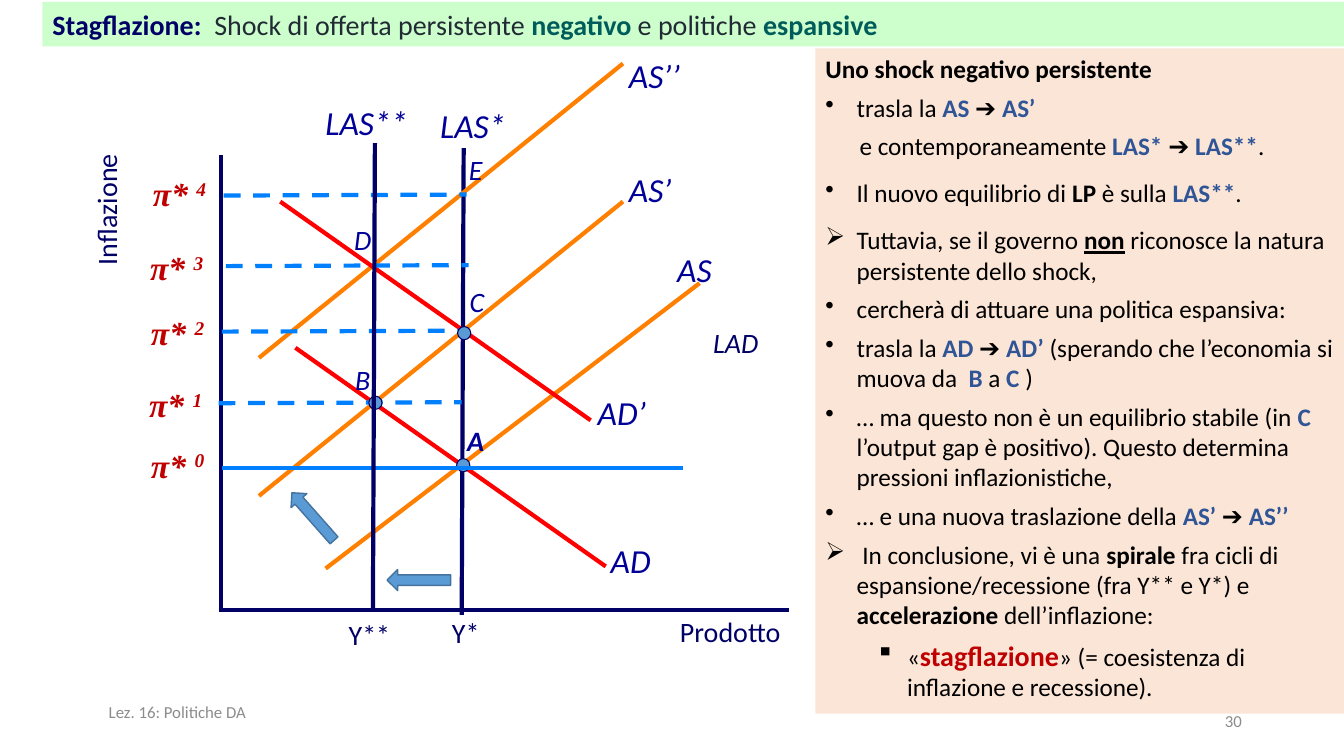
from lxml.etree import SubElement
from pptx import Presentation
from pptx.dml.color import RGBColor
from pptx.enum.dml import MSO_LINE
from pptx.enum.shapes import MSO_CONNECTOR, MSO_SHAPE
from pptx.enum.text import MSO_ANCHOR, MSO_AUTO_SIZE, PP_ALIGN
from pptx.oxml.ns import qn
from pptx.util import Pt

COLORS = {
    "navy": "000066", "label": "000099", "supply": "FF8000", "demand": "FF0000",
    "level": "0080FF", "rate": "C00000", "marker": "5B9BD5", "edge": "43739E",
    "bar": "CCFFCC", "heading": "222A35", "teal": "005C5A", "panel": "FBE5D6",
    "term": "2F5597", "black": "000000", "gray": "8C8C8C",
}


def write(paragraph, text, size=18, color="black", bold=False, italic=False,
          underline=False, font="Calibri", baseline=0):
    run = paragraph.add_run()
    run.text = text
    run.font.size = Pt(size)
    run.font.name = font
    run.font.bold = bold
    run.font.italic = italic
    run.font.underline = underline
    run.font.color.rgb = RGBColor.from_string(COLORS[color])
    if baseline:
        run.font._element.set("baseline", str(baseline * 1000))


def draw_line(x1, y1, x2, y2, color, dashed=False):
    line = slide.shapes.add_connector(MSO_CONNECTOR.STRAIGHT, Pt(x1), Pt(y1), Pt(x2), Pt(y2))
    line.line.color.rgb = RGBColor.from_string(COLORS[color])
    line.line.width = Pt(3)
    if dashed:
        line.line.dash_style = MSO_LINE.DASH
    SubElement(line._element.spPr, qn("a:effectLst"))


presentation = Presentation()
presentation.slide_width = Pt(960)
presentation.slide_height = Pt(540)
slide = presentation.slides.add_slide(presentation.slide_layouts[5])

heading = slide.shapes.title
heading.left, heading.top, heading.width, heading.height = Pt(30.2), Pt(1.4), Pt(929.8), Pt(31.7)
heading.fill.solid()
heading.fill.fore_color.rgb = RGBColor.from_string(COLORS["bar"])
heading.text_frame.auto_size = MSO_AUTO_SIZE.NONE
heading.text_frame.vertical_anchor = MSO_ANCHOR.TOP
heading_line = heading.text_frame.paragraphs[0]
heading_line.alignment = PP_ALIGN.LEFT
for text, color, bold in [
    ("Stagflazione:  ", "navy", True),
    ("Shock di offerta persistente ", "heading", False),
    ("negativo", "teal", True),
    (" e politiche ", "heading", False),
    ("espansive", "teal", True),
]:
    write(heading_line, text, size=20, color=color, bold=bold)

draw_line(157.7, 110.9, 157.7, 434.9, "navy")
draw_line(156.2, 435.6, 563.8, 435.6, "navy")
draw_line(331.2, 105.8, 329.8, 439.2, "navy")
for y in (354.2, 255.6):
    draw_line(185, y, 445, y - 210.2, "supply")
draw_line(232.6, 406.1, 499.7, 202.3, "supply")
for x, y in [(200.2, 144), (211, 248.4)]:
    draw_line(x, y, x + 221.7, y + 156.2, "demand")
for x, y in [(156.2, 288), (158.4, 236.9), (161.3, 190.1), (159.8, 139.7)]:
    draw_line(x, y, x + 173.5, y - 0.7, "level", dashed=True)

for kind, x, y, width, height, turn, edge, weight in [
    (MSO_SHAPE.OVAL, 326.9, 233.3, 9.4, 9.4, 0, "navy", 0.75),
    (MSO_SHAPE.OVAL, 263.5, 283, 9.4, 9.4, 0, "navy", 0.75),
    (MSO_SHAPE.OVAL, 326.2, 327.6, 9.4, 9.4, 0, "navy", 0.75),
    (MSO_SHAPE.RIGHT_ARROW, 276.5, 406.8, 45.4, 15.1, 180, "edge", 1),
    (MSO_SHAPE.RIGHT_ARROW, 200.9, 361.4, 45.4, 15.1, 228.5, "edge", 1),
]:
    marker = slide.shapes.add_shape(kind, Pt(x), Pt(y), Pt(width), Pt(height))
    marker.rotation = turn
    marker.shadow.inherit = False
    marker.fill.solid()
    marker.fill.fore_color.rgb = RGBColor.from_string(COLORS["marker"])
    marker.line.color.rgb = RGBColor.from_string(COLORS[edge])
    marker.line.width = Pt(weight)

draw_line(158.4, 334.1, 488.2, 334.1, "level")
draw_line(267.8, 102.2, 266.4, 435.6, "navy")

AXIS = {"size": 20, "color": "navy"}
POINT = {"size": 20, "color": "label", "italic": True}
CURVE = {"size": 24, "color": "label", "italic": True}
RATE = {"size": 24, "color": "rate", "bold": True, "italic": True, "font": "Times New Roman"}
FOOTER = {"size": 12, "color": "gray"}
LEFT, CENTER, RIGHT = PP_ALIGN.LEFT, PP_ALIGN.CENTER, PP_ALIGN.RIGHT

for text, x, y, width, height, align, turn, style in [
    ("Inflazione", 18.7, 133.9, 114.5, 31.7, CENTER, 270, AXIS),
    ("Prodotto", 461.5, 435.6, 120.2, 31.7, CENTER, 0, AXIS),
    ("Y*", 311.8, 436.3, 41.8, 31.7, CENTER, 0, AXIS),
    ("Y**", 239.8, 437.8, 48.2, 31.7, CENTER, 0, AXIS),
    ("LAD", 494.6, 229, 61.9, 31.7, CENTER, 0, {**AXIS, "italic": True}),
    ("A", 325.4, 298.8, 28.8, 31.7, CENTER, 0, {**POINT, "bold": True}),
    ("B", 244.8, 255.6, 28.8, 31.7, CENTER, 0, POINT),
    ("C", 326.2, 199.4, 28.8, 31.7, CENTER, 0, POINT),
    ("D", 244.8, 155.5, 28.8, 31.7, CENTER, 0, POINT),
    ("E", 325.4, 105.1, 28.8, 31.7, CENTER, 0, POINT),
    ("AD", 429.1, 382.3, 60.5, 36, LEFT, 0, CURVE),
    ("AD’", 419.8, 276.5, 60.5, 36, LEFT, 0, CURVE),
    ("AS", 476.6, 174.2, 44.6, 36, LEFT, 0, CURVE),
    ("AS’", 442.1, 117.4, 54, 36, LEFT, 0, CURVE),
    ("AS’’", 442.1, 36, 54, 36, LEFT, 0, CURVE),
    ("LAS*", 307.4, 71.3, 79.2, 36, LEFT, 0, CURVE),
    ("LAS**", 225.4, 69.1, 79.2, 36, LEFT, 0, CURVE),
    ("π* 0", 100.8, 313.9, 55.4, 36, LEFT, 0, RATE),
    ("π* 1", 99.4, 270.7, 55.4, 36, LEFT, 0, RATE),
    ("π* 2", 100.8, 219.6, 55.4, 36, LEFT, 0, RATE),
    ("π* 3", 100.1, 172.8, 55.4, 36, LEFT, 0, RATE),
    ("π* 4", 102.2, 120.2, 55.4, 36, LEFT, 0, RATE),
    ("Lez. 16: Politiche DA", 70.6, 493.9, 324, 28.8, LEFT, 0, FOOTER),
    ("30", 678.2, 500.4, 216, 28.8, RIGHT, 0, FOOTER),
]:
    label = slide.shapes.add_textbox(Pt(x), Pt(y), Pt(width), Pt(height))
    label.rotation = turn
    label.text_frame.word_wrap = style is not RATE
    label.text_frame.vertical_anchor = MSO_ANCHOR.MIDDLE if style is FOOTER else MSO_ANCHOR.TOP
    caption = label.text_frame.paragraphs[0]
    caption.alignment = align
    if style is RATE:
        write(caption, text[:-1], **style)
        write(caption, text[-1], baseline=30, **style)
    else:
        write(caption, text, **style)

panel = slide.shapes.add_shape(MSO_SHAPE.RECTANGLE, Pt(582.5), Pt(34.6), Pt(378), Pt(475.2))
panel.shadow.inherit = False
panel.fill.solid()
panel.fill.fore_color.rgb = RGBColor.from_string(COLORS["panel"])
panel.line.fill.background()
panel.text_frame.word_wrap = True
panel.text_frame.vertical_anchor = MSO_ANCHOR.TOP

PLAIN = {}
BOLD = {"bold": True}
TERM = {"bold": True, "color": "term"}
HANG = 22.3
argument = [
    ("", 0, 0, [("Uno shock negativo persistente", BOLD)]),
    ("•", 6, HANG, [("trasla la ", PLAIN), ("AS ", TERM), ("➔ ", PLAIN), ("AS’", TERM)]),
    ("", 6, 24.4, [("e contemporaneamente ", PLAIN), ("LAS* ", TERM), ("➔ ", PLAIN),
                   ("LAS**", TERM), (".", PLAIN)]),
    ("•", 12, HANG, [("Il nuovo equilibrio di ", PLAIN), ("LP", BOLD), (" è sulla ", PLAIN),
                     ("LAS**", TERM), (".", PLAIN)]),
    ("➢", 12, HANG, [("Tuttavia, se il governo ", PLAIN), ("non", {"bold": True, "underline": True}),
                     (" riconosce la natura persistente dello shock,", PLAIN)]),
    ("•", 6, HANG, [("cercherà di attuare una politica espansiva:", PLAIN)]),
    ("•", 6, HANG, [("trasla la ", PLAIN), ("AD ", TERM), ("➔ ", PLAIN), ("AD’ ", TERM),
                    ("(sperando che l’economia si muova da  ", PLAIN), ("B", TERM),
                    (" a ", PLAIN), ("C ", TERM), (")", PLAIN)]),
    ("•", 6, HANG, [("… ma questo non è un equilibrio stabile (in ", PLAIN), ("C", TERM),
                    (" l’output gap è positivo). Questo determina pressioni inflazionistiche,", PLAIN)]),
    ("•", 6, HANG, [("… e una nuova traslazione della ", PLAIN), ("AS’ ", TERM),
                    ("➔ ", PLAIN), ("AS’’", TERM)]),
    ("➢", 6, HANG, [(" In conclusione, vi è una ", PLAIN), ("spirale", BOLD),
                    (" fra cicli di espansione/recessione (fra Y** e Y*) e ", PLAIN),
                    ("accelerazione", BOLD), (" dell’inflazione:", PLAIN)]),
    ("▪", 6, 58.3, [("«", PLAIN), ("stagflazione", {"size": 20, "color": "rate", "bold": True}),
                    ("» (= coesistenza di inflazione e recessione).", PLAIN)]),
]
for index, (bullet, gap, indent, phrases) in enumerate(argument):
    point = panel.text_frame.add_paragraph() if index else panel.text_frame.paragraphs[0]
    point.alignment = LEFT
    point.space_before = Pt(gap)
    properties = point._p.get_or_add_pPr()
    properties.set("marL", str(Pt(indent)))
    if bullet:
        properties.set("indent", str(-Pt(HANG)))
        SubElement(properties, qn("a:buChar"), char=bullet)
    if bullet == "▪":
        point.level = 1
    for text, style in phrases:
        write(point, text, **style)

presentation.save("out.pptx")
